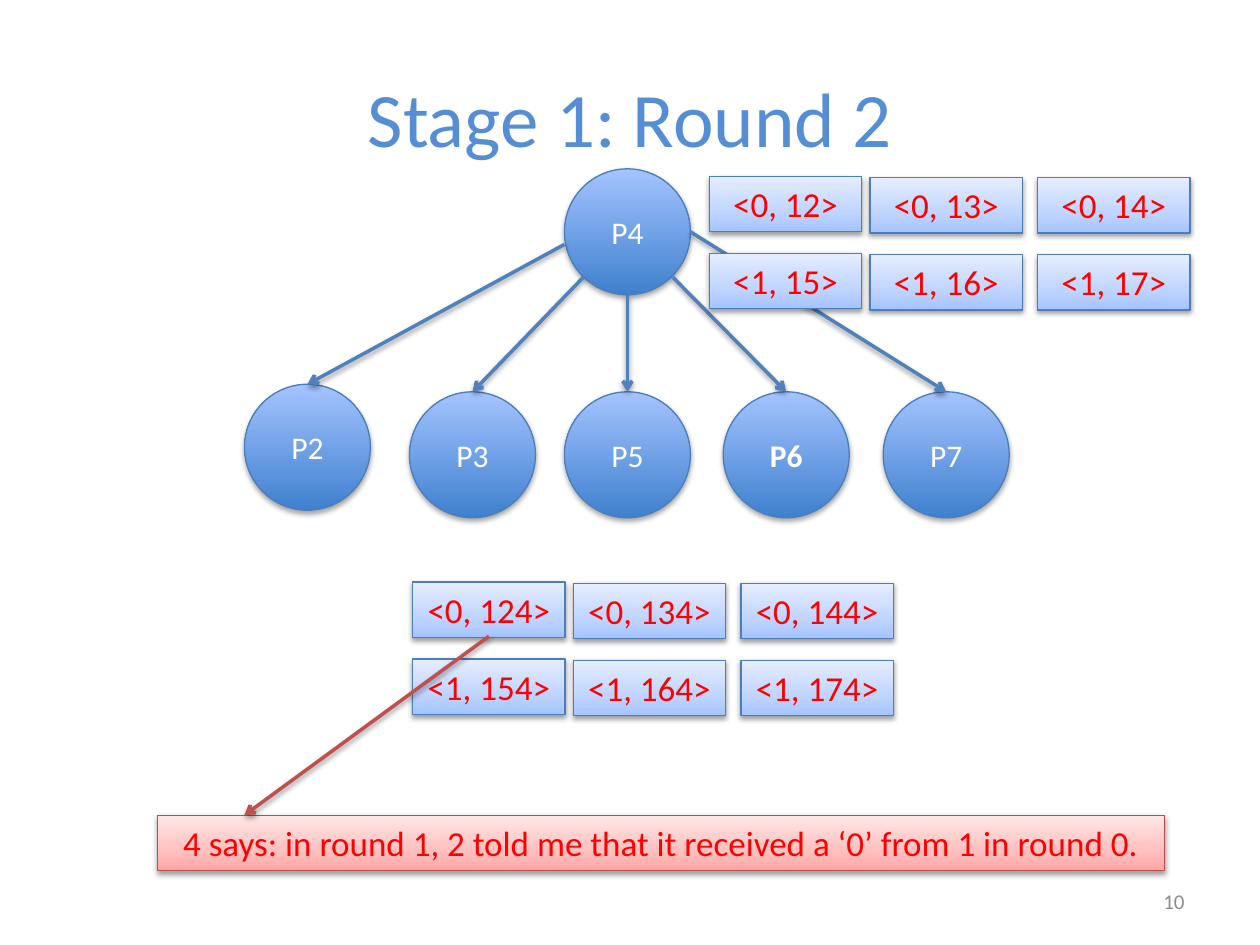
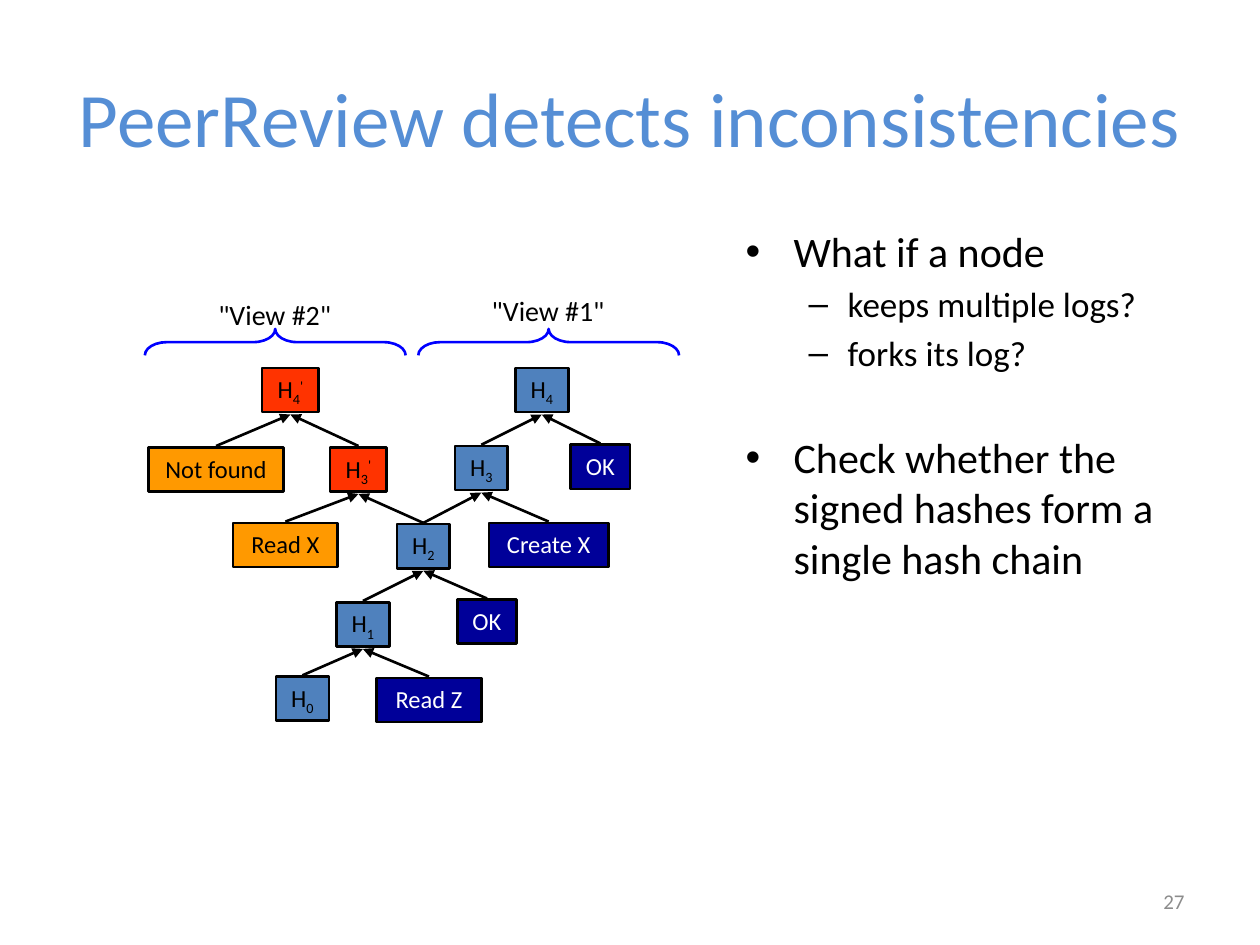
from lxml import etree
from pptx import Presentation
from pptx.dml.color import RGBColor
from pptx.enum.shapes import MSO_CONNECTOR, MSO_SHAPE
from pptx.enum.text import MSO_ANCHOR, MSO_AUTO_SIZE, PP_ALIGN
from pptx.oxml.ns import qn
from pptx.util import Inches, Pt

OVAL, RECT, BRACE = MSO_SHAPE.OVAL, MSO_SHAPE.RECTANGLE, MSO_SHAPE.RIGHT_BRACE
STRAIGHT = MSO_CONNECTOR.STRAIGHT
TOP, MIDDLE = MSO_ANCHOR.TOP, MSO_ANCHOR.MIDDLE
LEFT, CENTER, RIGHT = PP_ALIGN.LEFT, PP_ALIGN.CENTER, PP_ALIGN.RIGHT
GROW, FIXED = MSO_AUTO_SIZE.SHAPE_TO_FIT_TEXT, MSO_AUTO_SIZE.NONE

FONT = "Calibri"
SLIDE_W, SLIDE_H = Inches(10), Inches(7.5)
COL, ROW = SLIDE_W / 100, SLIDE_H / 75

BLACK = RGBColor(0x00, 0x00, 0x00)
WHITE = RGBColor(0xFF, 0xFF, 0xFF)
TITLE_BLUE = RGBColor(0x55, 0x8E, 0xD5)
NUMBER_GRAY = RGBColor(0x8C, 0x8C, 0x8C)
STEEL = RGBColor(0x4F, 0x81, 0xBD)
STEEL_EDGE = RGBColor(0x4B, 0x7E, 0xBC)
RED = RGBColor(0xFF, 0x00, 0x00)
BRICK = RGBColor(0xC0, 0x50, 0x4D)
BRICK_EDGE = RGBColor(0xBF, 0x4C, 0x48)
FORK_RED = RGBColor(0xFF, 0x33, 0x00)
ORANGE = RGBColor(0xFF, 0x99, 0x00)
NAVY = RGBColor(0x00, 0x00, 0x99)
BRACE_BLUE = RGBColor(0x00, 0x00, 0xFF)

PROCESS_FADE = [(0, RGBColor(0x3F, 0x80, 0xCE)), (100, RGBColor(0xA4, 0xC4, 0xFF))]
MESSAGE_FADE = [(0, RGBColor(0xA4, 0xC4, 0xFF)), (35, RGBColor(0xBF, 0xD4, 0xFF)),
                (100, RGBColor(0xE6, 0xEE, 0xFF))]
NOTE_FADE = [(0, RGBColor(0xFF, 0xA6, 0xA5)), (35, RGBColor(0xFF, 0xC0, 0xBF)),
             (100, RGBColor(0xFF, 0xE7, 0xE7))]


def place(box):
    left, top, width, height = box
    return round(left * COL), round(top * ROW), round(width * COL), round(height * ROW)


def inside(region, x, y, width, height):
    return region[0] + x, region[1] + y, width, height


def add_run(paragraph, text, size, color, bold=None, baseline=0):
    run = paragraph.add_run()
    run.text = text
    font = run.font
    font.name, font.size, font.bold = FONT, Pt(size), bold
    font.color.rgb = color
    if baseline:
        run._r.get_or_add_rPr().set("baseline", str(baseline * 1000))


def set_frame(shape, anchor=TOP, align=CENTER, wrap=True, fit=FIXED):
    frame = shape.text_frame
    frame.word_wrap, frame.auto_size, frame.vertical_anchor = wrap, fit, anchor
    paragraph = frame.paragraphs[0]
    paragraph.alignment = align
    return paragraph


def add_label(slide, box, text, size, color, **frame):
    label = slide.shapes.add_textbox(*place(box))
    add_run(set_frame(label, **frame), text, size, color)


def cast_shadow(shape, opacity, distance):
    effects = etree.SubElement(shape._element.spPr, qn("a:effectLst"))
    outer = etree.SubElement(effects, qn("a:outerShdw"), blurRad=str(Pt(3.1)),
                             dist=str(Pt(distance)), dir="5400000", rotWithShape="0")
    shade = etree.SubElement(outer, qn("a:srgbClr"), val=str(BLACK))
    etree.SubElement(shade, qn("a:alpha"), val=str(opacity * 1000))


def fade(shape, stops):
    shape.fill.gradient()
    shape.fill.gradient_angle = 90
    stop_list = shape._element.spPr.find(".//" + qn("a:gsLst"))
    for old in list(stop_list):
        stop_list.remove(old)
    for position, color in stops:
        stop = etree.SubElement(stop_list, qn("a:gs"), pos=str(position * 1000))
        etree.SubElement(stop, qn("a:srgbClr"), val=str(color))


def add_glossy(slide, kind, box, stops, edge, opacity=38, distance=1.6):
    shape = slide.shapes.add_shape(kind, *place(box))
    fade(shape, stops)
    shape.line.color.rgb = edge
    shape.line.width = Pt(0.75)
    cast_shadow(shape, opacity, distance)
    return shape


def add_arrow(slide, start, end, color, width, head, shadow=False):
    arrow = slide.shapes.add_connector(
        STRAIGHT, round(start[0] * COL), round(start[1] * ROW),
        round(end[0] * COL), round(end[1] * ROW))
    arrow.line.color.rgb = color
    arrow.line.width = Pt(width)
    etree.SubElement(arrow.line._get_or_add_ln(), qn("a:tailEnd"), type=head)
    if shadow:
        cast_shadow(arrow, 38, 1.6)
    else:
        etree.SubElement(arrow._element.spPr, qn("a:effectLst"))
    return arrow


def add_base(deck, title, number):
    slide = deck.slides.add_slide(deck.slide_layouts[6])
    add_label(slide, (5, 3, 90, 12.5), title, 44, TITLE_BLUE, anchor=MIDDLE)
    add_label(slide, (71.7, 69.5, 23.3, 4), number, 12, NUMBER_GRAY,
              anchor=MIDDLE, align=RIGHT)
    return slide


def add_process(slide, box, name, bold=None):
    process = add_glossy(slide, OVAL, box, PROCESS_FADE, STEEL_EDGE, 35, 1.8)
    add_run(set_frame(process, MIDDLE), name, 18, WHITE, bold)
    return process


def add_broadcast(slide, region):
    size = 10
    sender = inside(region, 25.4, 0, size, size)
    add_process(slide, sender, "P4")
    receivers = [("P2", 0, 17.1, (0, 0.6)), ("P3", 13.1, 17.7, (0.15, 0.86)),
                 ("P5", 25.4, 17.7, (0.5, 1)), ("P6", 38, 17.7, (0.86, 0.86)),
                 ("P7", 50.7, 17.7, (1, 0.5))]
    links = []
    for name, x, y, (across, down) in receivers:
        box = inside(region, x, y, size, size)
        receiver = add_process(slide, box, name, bold=name == "P6" or None)
        start = sender[0] + across * size, sender[1] + down * size
        links.append((start, (box[0] + size / 2, box[1]), receiver))
    for start, end, receiver in links:
        add_arrow(slide, start, end, STEEL, 2, "arrow", shadow=True).end_connect(receiver, 0)


def add_messages(slide, region, rows):
    for row, messages in enumerate(rows):
        for x, drop, message in zip((0, 12.75, 26.05), (0, 0.1, 0.1), messages):
            box = inside(region, x, row * 6.1 + drop, 12.1, 4.4)
            chip = add_glossy(slide, RECT, box, MESSAGE_FADE, STEEL_EDGE)
            add_run(set_frame(chip, fit=GROW), message, 20, RED)


def add_explanation(slide, region, text, source):
    note = add_glossy(slide, RECT, region, NOTE_FADE, BRICK_EDGE)
    add_run(set_frame(note, fit=GROW), text, 20, RED)
    add_arrow(slide, source, (region[0] + 6.9, region[1]), BRICK, 2, "arrow", shadow=True)


def build_round(deck):
    slide = add_base(deck, "Stage 1: Round 2", "10")
    add_broadcast(slide, (19.4, 13.4, 60.7, 27.7))
    add_messages(slide, (56.3, 14, 38.2, 10.6),
                 [("<0, 12>", "<0, 13>", "<0, 14>"), ("<1, 15>", "<1, 16>", "<1, 17>")])
    add_messages(slide, (32.75, 46.2, 38.2, 10.6),
                 [("<0, 124>", "<0, 134>", "<0, 144>"), ("<1, 154>", "<1, 164>", "<1, 174>")])
    add_explanation(slide, (12.5, 64.7, 79.9, 4.4),
                    "4 says: in round 1, 2 told me that it received a ‘0’ from 1 in round 0.",
                    (38.8, 50.5))


def add_questions(slide, region):
    frame = slide.shapes.add_textbox(*place(region)).text_frame
    frame.word_wrap = True
    main, detail = (24, 0.38, 0.38, "•"), (20, 0.81, 0.31, "–")
    points = [("What if a node", main, 0), ("keeps multiple logs?", detail, 4),
              ("forks its log?", detail, 4),
              ("Check whether the signed hashes form a single hash chain", main, 33)]
    for index, (text, (size, margin, hang, mark), gap) in enumerate(points):
        point = frame.add_paragraph() if index else frame.paragraphs[0]
        properties = point._p.get_or_add_pPr()
        properties.set("marL", str(Inches(margin)))
        properties.set("indent", str(-Inches(hang)))
        etree.SubElement(properties, qn("a:buFont"), typeface="Arial")
        etree.SubElement(properties, qn("a:buChar"), char=mark)
        point.alignment = LEFT
        point.space_before = Pt(gap)
        add_run(point, text, size, BLACK)


def add_entry(slide, box, label, fill):
    entry = slide.shapes.add_shape(RECT, *place(box))
    entry.shadow.inherit = False
    entry.fill.solid()
    entry.fill.fore_color.rgb = fill
    entry.line.color.rgb = BLACK
    entry.line.width = Pt(1.5)
    paragraph = set_frame(entry, wrap=False, fit=GROW)
    name, *scripts = label
    color = WHITE if fill == NAVY else BLACK
    add_run(paragraph, name, 14, color)
    for script, baseline in zip(scripts, (-25, 30)):
        add_run(paragraph, script, 14, color, baseline=baseline)


def add_hash_tree(slide, region):
    height = 3.5
    entries = {
        "fork 3": (("H", "3", "'"), 14.4, 6.3, 4.5, FORK_RED),
        "read x": (("Read X",), 6.7, 12.3, 8.3, ORANGE),
        "fork 4": (("H", "4", "'"), 9, 0, 4.5, FORK_RED),
        "not found": (("Not found",), 0, 6.3, 10.7, ORANGE),
        "read z": (("Read Z",), 18.1, 24.6, 8.3, NAVY),
        "ok 1": (("OK",), 24.5, 18.4, 4.7, NAVY),
        "create x": (("Create X",), 27, 12.3, 9.5, NAVY),
        "hash 0": (("H", "0"), 10.1, 24.5, 4.2, STEEL),
        "hash 1": (("H", "1"), 14.9, 18.6, 4.2, STEEL),
        "hash 2": (("H", "2"), 19.7, 12.4, 4.2, STEEL),
        "hash 3": (("H", "3"), 24.3, 6.2, 4.2, STEEL),
        "hash 4": (("H", "4"), 29.1, 0, 4.2, STEEL),
        "ok 3": (("OK",), 33.5, 6.1, 4.7, NAVY),
    }
    children = {
        "fork 4": ("not found", "fork 3"), "fork 3": ("read x", "hash 2"),
        "hash 4": ("hash 3", "ok 3"), "hash 3": ("hash 2", "create x"),
        "hash 2": ("hash 1", "ok 1"), "hash 1": ("hash 0", "read z"),
    }
    boxes = {}
    for key, (label, x, y, width, fill) in entries.items():
        boxes[key] = inside(region, x, y, width, height)
        add_entry(slide, boxes[key], label, fill)
    for parent, pair in children.items():
        left, top, width, _ = boxes[parent]
        end = left + width / 2, top + height + 0.2
        for child in pair:
            left, top, width, _ = boxes[child]
            add_arrow(slide, (left + width / 2, top - 0.1), end, BLACK, 1.5, "triangle")


def add_view(slide, region, name, label_top):
    left, top, width, height = region
    depth = 2.1
    middle = left + width / 2
    brace = slide.shapes.add_shape(
        BRACE, *place((middle - depth / 2, top + (height - width) / 2, depth, width)))
    brace.rotation = 270
    brace.adjustments[0] = 0.83
    brace.shadow.inherit = False
    brace.fill.background()
    brace.line.color.rgb = BRACE_BLUE
    brace.line.width = Pt(1.5)
    add_label(slide, (middle - 6, top + label_top, 11.9, 3.7), name, 16, BLACK,
              wrap=False, fit=GROW)


def build_inconsistencies(deck):
    slide = add_base(deck, "PeerReview detects inconsistencies", "27")
    add_questions(slide, (58.2, 17.4, 39.6, 50.7))
    add_hash_tree(slide, (11.8, 29.2, 38.2, 28.1))
    add_view(slide, (33.2, 26.1, 20.7, 2.1), '"View #1"', -3.3)
    add_view(slide, (11.5, 26.1, 20.7, 2.1), '"View #2"', -3)


def main():
    deck = Presentation()
    deck.slide_width, deck.slide_height = SLIDE_W, SLIDE_H
    build_round(deck)
    build_inconsistencies(deck)
    deck.save("out.pptx")


if __name__ == "__main__":
    main()
